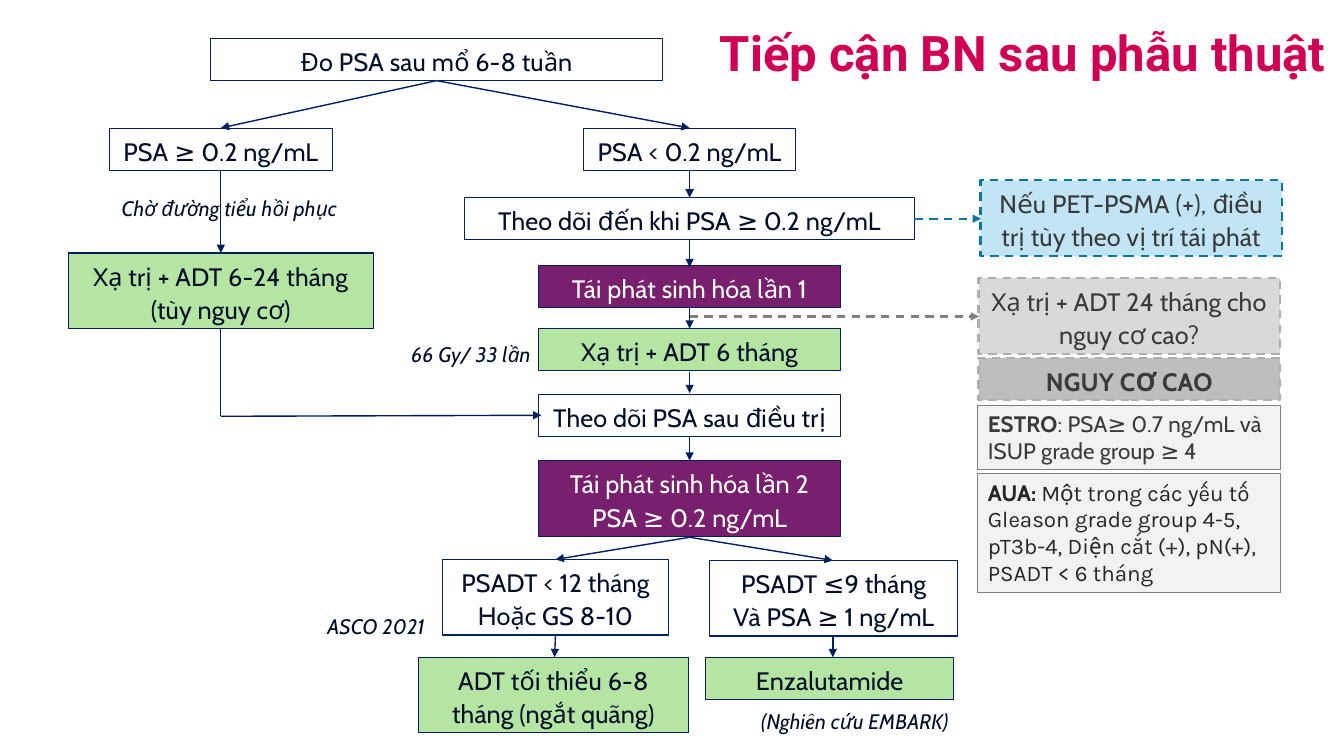
from lxml import etree
from pptx import Presentation
from pptx.dml.color import RGBColor
from pptx.enum.dml import MSO_LINE
from pptx.enum.shapes import MSO_CONNECTOR, MSO_SHAPE
from pptx.enum.text import MSO_ANCHOR, MSO_AUTO_SIZE, PP_ALIGN
from pptx.oxml.ns import qn
from pptx.util import Inches, Pt

RECT = MSO_SHAPE.RECTANGLE
LINE = MSO_CONNECTOR.STRAIGHT
DASH = MSO_LINE.DASH
TOP, MIDDLE = MSO_ANCHOR.TOP, MSO_ANCHOR.MIDDLE
LEFT, CENTER = PP_ALIGN.LEFT, PP_ALIGN.CENTER
GROW = MSO_AUTO_SIZE.SHAPE_TO_FIT_TEXT


class Theme:
    font, head, alt = "Cabin", "Roboto", "Karla"
    title, body, note, small = 35, 18, 16, 15
    pink, navy, ink, white = "D00054", "002060", "000E2A", "FFFFFF"
    green, plum = "B4E5A2", "78206E"
    sky, blue = "C1E5F5", "0B76A0"
    pale, light, mid, edge, gray = "F2F2F2", "D9D9D9", "BEBEBE", "AEAEAE", "808080"
    dark, black = "3A3A3A", "262626"


def write(shape, text, lead="", size=Theme.body, font=Theme.font, color=Theme.ink,
          bold=False, italic=False, align=CENTER, anchor=TOP, lines=1.1, track=10):
    frame = shape.text_frame
    frame.word_wrap = True
    frame.auto_size = GROW
    frame.vertical_anchor = anchor
    for n, part in enumerate(text.split("\n")):
        para = frame.add_paragraph() if n else frame.paragraphs[0]
        para.alignment = align
        para.line_spacing = lines
        for words, face, heavy in ((lead, Theme.font, True), (part, font, bold)):
            if words:
                run = para.add_run()
                run.text = words
                run.font.name = face
                run.font.size = Pt(size)
                run.font.bold = heavy
                run.font.italic = italic
                run.font.color.rgb = RGBColor.from_string(color)
                if track:
                    run.font._element.set("spc", str(track))


def link(x1, y1, x2, y2, color=Theme.navy, width=1, dash=None, arrow=True):
    wire = slide.shapes.add_connector(LINE, Inches(x1), Inches(y1), Inches(x2), Inches(y2))
    wire.line.color.rgb = RGBColor.from_string(color)
    wire.line.width = Pt(width)
    if dash:
        wire.line.dash_style = dash
    if arrow:
        etree.SubElement(wire.line._get_or_add_ln(), qn("a:tailEnd"), type="triangle")
    etree.SubElement(wire._element.spPr, qn("a:effectLst"))


deck = Presentation()
deck.slide_width, deck.slide_height = Inches(13.33), Inches(7.5)
slide = deck.slides.add_slide(deck.slide_layouts[6])

# Title
title = slide.shapes.add_textbox(Inches(7.04), Inches(0.24), Inches(6.29), Inches(0.63))
write(title, "Tiếp cận BN sau phẫu thuật", size=Theme.title, font=Theme.head,
      color=Theme.pink, bold=True, align=LEFT, anchor=MIDDLE, lines=0.9, track=0)

# Column centres and box heights
START, WEST, MAIN, SIDE = 4.33, 2.19, 6.84, 11.2
LOW, HIGH = 5.51, 8.26
ONE, TWO = 0.42, 0.75

# Boxes: centre, top, width, height, fill, line, weight, dash, text, format
flow = (Theme.navy, 0.75, None)
soft = (Theme.edge, 1.5, DASH)
thin = (Theme.gray, 0.75, None)
note = dict(size=Theme.note, align=LEFT, lines=1.0)
pale = dict(color=Theme.white)
dark = dict(color=Theme.dark)
boxes = [
    (START, 0.38, 4.49, ONE, Theme.white, flow, "Đo PSA sau mổ 6-8 tuần", {}),
    (WEST, 1.27, 2.21, ONE, None, flow, "PSA ≥ 0.2 ng/mL", {}),
    (WEST, 2.51, 3.03, TWO, Theme.green, flow, "Xạ trị + ADT 6-24 tháng (tùy nguy cơ)", {}),
    (MAIN, 1.27, 2.1, ONE, None, flow, "PSA < 0.2 ng/mL", {}),
    (MAIN, 1.96, 4.47, ONE, None, flow, "Theo dõi đến khi PSA ≥ 0.2 ng/mL", {}),
    (MAIN, 2.63, 2.99, ONE, Theme.plum, flow, "Tái phát sinh hóa lần 1", pale),
    (MAIN, 3.26, 2.99, ONE, Theme.green, flow, "Xạ trị + ADT 6 tháng", {}),
    (MAIN, 3.91, 2.99, ONE, None, flow, "Theo dõi PSA sau điều trị", {}),
    (MAIN, 4.57, 2.99, TWO, Theme.plum, flow, "Tái phát sinh hóa lần 2\nPSA ≥ 0.2 ng/mL", pale),
    (LOW, 5.55, 2.24, TWO, None, flow, "PSADT < 12 tháng\nHoặc GS 8-10", {}),
    (5.49, 6.52, 2.68, TWO, Theme.green, flow, "ADT tối thiểu 6-8 tháng (ngắt quãng)", {}),
    (8.27, 5.56, 2.46, TWO, None, flow, "PSADT ≤9 tháng\nVà PSA ≥ 1 ng/mL", {}),
    (8.23, 6.52, 2.46, ONE, Theme.green, flow, "Enzalutamide", {}),
    (11.22, 1.79, 2.99, TWO, Theme.sky, (Theme.blue, 1.5, DASH),
     "Nếu PET-PSMA (+), điều trị tùy theo vị trí tái phát", dark),
    (SIDE, 2.76, 2.99, TWO, Theme.light, soft, "Xạ trị + ADT 24 tháng cho nguy cơ cao?", dark),
    (SIDE, 3.55, 2.99, ONE, Theme.mid, soft, "NGUY CƠ CAO", dict(dark, bold=True)),
    (SIDE, 4.02, 3, 0.64, Theme.pale, thin, ": PSA≥ 0.7 ng/mL và ISUP grade group ≥ 4",
     dict(note, lead="ESTRO", color=Theme.dark)),
    (SIDE, 4.7, 3, 1.18, Theme.pale, thin,
     "Một trong các yếu tố Gleason grade group 4-5, pT3b-4, Diện cắt (+), pN(+), PSADT < 6 tháng",
     dict(note, lead="AUA: ", font=Theme.alt, color=Theme.black, track=0)),
]
for mid, top, wide, tall, fill, (color, weight, dash), text, form in boxes:
    box = slide.shapes.add_shape(RECT, Inches(mid - wide / 2), Inches(top),
                                 Inches(wide), Inches(tall))
    box.shadow.inherit = False
    if fill:
        box.fill.solid()
        box.fill.fore_color.rgb = RGBColor.from_string(fill)
    else:
        box.fill.background()
    box.line.color.rgb = RGBColor.from_string(color)
    box.line.width = Pt(weight)
    if dash:
        box.line.dash_style = dash
    write(box, text, **form)

# Straight steps down the main column
for top, end in [(1.69, 1.96), (2.38, 2.65), (3.05, 3.26), (3.69, 3.9), (4.33, 4.57)]:
    link(MAIN, top, MAIN, end)

# Branches and the left route
link(START, 0.8, WEST, 1.27)
link(START, 0.8, MAIN, 1.27)
link(WEST, 1.69, WEST, 2.51)
link(WEST, 3.26, WEST, 4.13, arrow=False)
link(WEST, 4.13, 5.37, 4.12)
link(MAIN, 5.33, LOW, 5.55)
link(MAIN, 5.33, HIGH, 5.56)
link(LOW, 6.3, 5.5, 6.52)
link(HIGH, 6.31, HIGH, 6.52)

# Dashed side routes
link(MAIN, 3.14, 9.71, 3.14, color=Theme.gray, width=1.5, dash=DASH)
link(9.07, 2.17, 9.73, 2.17, color=Theme.blue, width=1.5, dash=DASH)

# Italic labels
for left, top, wide, text in [
    (0.03, 1.87, 4.49, "Chờ đường tiểu hồi phục"),
    (7.04, 6.96, 2.88, "(Nghiên cứu EMBARK)"),
    (2.29, 6.01, 2.88, "ASCO 2021"),
    (3.23, 3.31, 2.88, "66 Gy/ 33 lần"),
]:
    label = slide.shapes.add_textbox(Inches(left), Inches(top), Inches(wide), Inches(0.37))
    write(label, text, size=Theme.small, italic=True)

deck.save("out.pptx")
